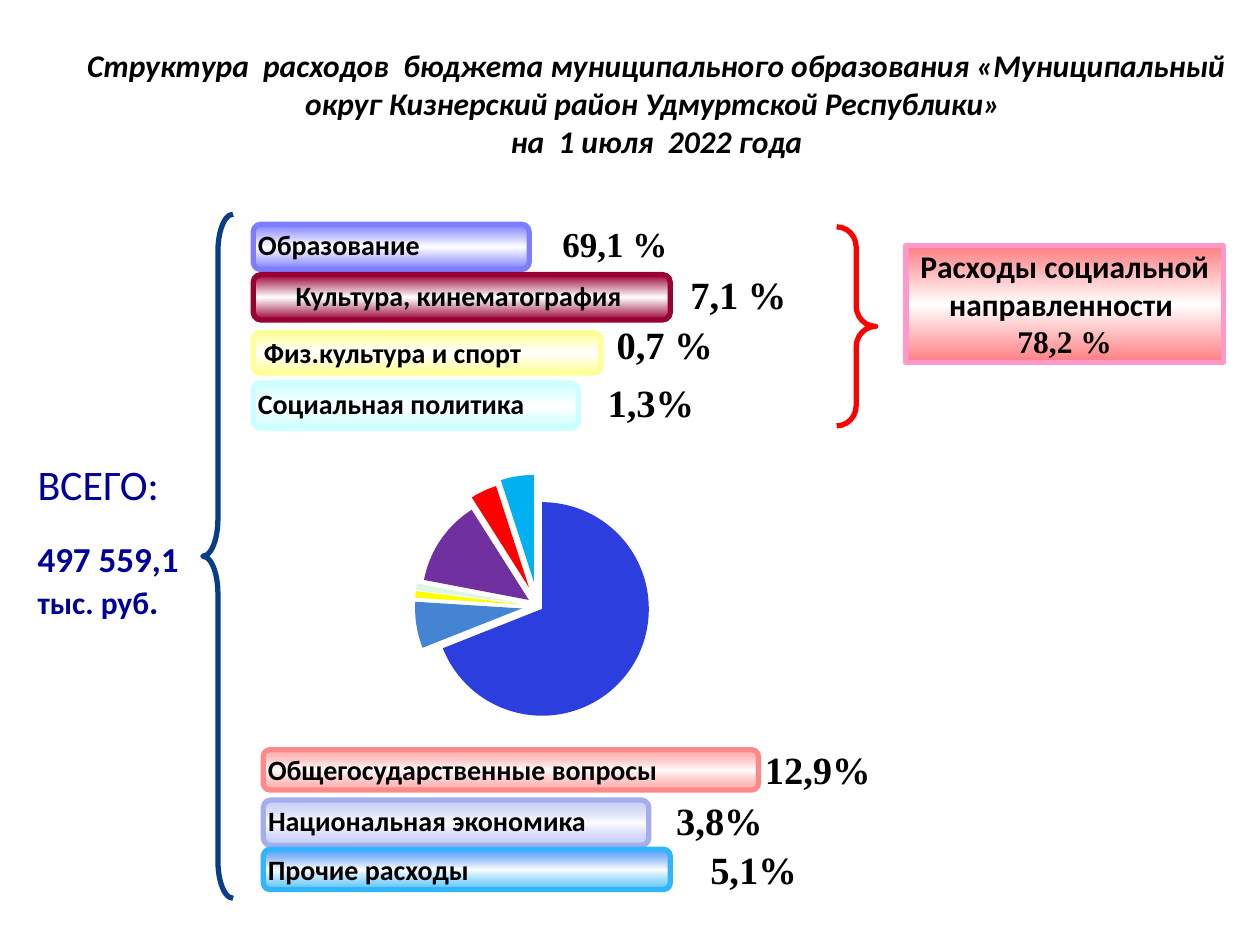
import pptx
import pptx.chart.data
import pptx.dml.color
import pptx.enum.chart
import pptx.enum.shapes
import pptx.enum.text
import pptx.oxml
import pptx.oxml.ns
import pptx.util

Inches = pptx.util.Inches
SHAPES = pptx.enum.shapes.MSO_SHAPE
ALIGN = pptx.enum.text.PP_ALIGN
ANCHOR = pptx.enum.text.MSO_ANCHOR
FIT = pptx.enum.text.MSO_AUTO_SIZE

COLORS = {
    "text": "000000", "white": "FFFFFF", "total": "000099",
    "education": "7D7DFF", "culture": "990033", "sport": "FFFF99", "social": "CCFFFF",
    "general": "FF7D7D", "general line": "FF8989",
    "economy": "A4B1F4", "economy line": "A5AEED",
    "other": "2D83F4", "other line": "31B6FD",
    "summary": "FF7C80", "summary line": "FF99CC",
    "social brace": "FF0000", "total brace": "073E87",
}
SLICES = [
    (69, "2D3EDF", 5), (7, "4584D3", 15), (1, "FFFF00", 15), (1, "DEF6E4", 15),
    (13, "7030A0", 10), (4, "FF0000", 19), (5, "00B0F0", 23),
]


def rgb(name):
    return pptx.dml.color.RGBColor.from_string(COLORS.get(name, name))


class BudgetSlide:
    sans = "Calibri"
    serif = "Times New Roman"
    line_width = pptx.util.Pt(3)

    def __init__(self, page):
        self.page = page

    def run(self, para, text, size, font=None, color="text", bold=True, italic=False):
        span = para.add_run()
        span.text = text
        span.font.size = pptx.util.Pt(size)
        span.font.name = font or self.sans
        span.font.color.rgb = rgb(color)
        span.font.bold = bold
        span.font.italic = italic

    def insets(self, frame, side, top):
        frame.margin_left = frame.margin_right = Inches(side)
        frame.margin_top = frame.margin_bottom = Inches(top)

    def title(self, lines, at):
        box = self.page.shapes.title
        box.left, box.top, box.width, box.height = map(Inches, at)
        frame = box.text_frame
        frame.vertical_anchor = ANCHOR.MIDDLE
        para = frame.paragraphs[0]
        para.alignment = ALIGN.CENTER
        for index, line in enumerate(lines):
            if index:
                para.add_line_break()
            self.run(para, line, 18, italic=True)

    def pie(self, slices, at):
        data = pptx.chart.data.CategoryChartData()
        data.categories = [str(number + 1) for number in range(len(slices))]
        data.add_series("Series 1", [value for value, _, _ in slices])
        kind = pptx.enum.chart.XL_CHART_TYPE.PIE
        chart = self.page.shapes.add_chart(kind, *map(Inches, at), data).chart
        chart.has_legend = False
        chart.has_title = False
        chart.font.name = self.sans
        chart.font.size = pptx.util.Pt(18)
        chart.font.color.rgb = rgb("text")
        plot = chart.plots[0]
        plot.vary_by_categories = True
        series = plot.series[0]
        ns = pptx.oxml.ns.nsdecls("c")
        for index, (_, color, offset) in enumerate(slices):
            fill = series.points[index].format.fill
            fill.solid()
            fill.fore_color.rgb = rgb(color)
            properties = series._element.findall(pptx.oxml.ns.qn("c:dPt"))[index].find(
                pptx.oxml.ns.qn("c:spPr"))
            properties.addprevious(pptx.oxml.parse_xml(f'<c:explosion {ns} val="{offset}"/>'))
        series._element.find(pptx.oxml.ns.qn("c:dPt")).addprevious(
            pptx.oxml.parse_xml(f'<c:explosion {ns} val="31"/>'))
        area = chart._chartSpace.chart.plotArea
        for layout in area.findall(pptx.oxml.ns.qn("c:layout")):
            area.remove(layout)
        places = "".join(f'<c:{key} val="{value}"/>' for key, value in (
            ("layoutTarget", "inner"), ("xMode", "edge"), ("yMode", "edge"),
            ("x", 0.1), ("y", 0.5), ("w", 0.54), ("h", 0.5)))
        area.insert(0, pptx.oxml.parse_xml(
            f"<c:layout {ns}><c:manualLayout>{places}</c:manualLayout></c:layout>"))

    def gradient(self, shape, stops):
        shape.fill.gradient()
        stop_list = shape._element.spPr.find(
            pptx.oxml.ns.qn("a:gradFill")).find(pptx.oxml.ns.qn("a:gsLst"))
        for stop in list(stop_list):
            stop_list.remove(stop)
        for position, (color, alpha) in zip((0, 50, 100), stops):
            stop_list.append(pptx.oxml.parse_xml(
                f'<a:gs {pptx.oxml.ns.nsdecls("a")} pos="{position * 1000}">'
                f'<a:srgbClr val="{COLORS[color]}"><a:alpha val="{alpha * 1000}"/>'
                "</a:srgbClr></a:gs>"))
        shape.fill.gradient_angle = 270

    def outlined(self, kind, at, line):
        shape = self.page.shapes.add_shape(kind, *map(Inches, at))
        shape.shadow.inherit = False
        shape.line.color.rgb = rgb(line)
        shape.line.width = self.line_width
        return shape

    def panel(self, kind, at, lines, color, line, end=None, alpha=100, align=ALIGN.LEFT):
        shape = self.outlined(kind, at, line)
        self.gradient(shape, [(color, alpha), ("white", 100), (end or color, alpha)])
        frame = shape.text_frame
        frame.word_wrap = True
        frame.auto_size = FIT.SHAPE_TO_FIT_TEXT
        frame.vertical_anchor = ANCHOR.TOP
        self.insets(frame, 0.02, 0.01)
        for index, (text, size, font) in enumerate(lines):
            para = frame.add_paragraph() if index else frame.paragraphs[0]
            para.alignment = align
            self.run(para, text, size, font)

    def bar(self, text, at, color, line=None, **options):
        self.panel(SHAPES.ROUNDED_RECTANGLE, at, [(text, 16, self.sans)],
                   color, line or color, **options)

    def percent(self, text, at, size=22):
        frame = self.page.shapes.add_textbox(*map(Inches, at)).text_frame
        frame.word_wrap = True
        frame.vertical_anchor = ANCHOR.MIDDLE
        self.insets(frame, 0.02, 0.02)
        frame.paragraphs[0].alignment = ALIGN.CENTER
        self.run(frame.paragraphs[0], text, size, self.serif)

    def brace(self, at, curve, color, rotation=0):
        shape = self.outlined(SHAPES.LEFT_BRACE, at, color)
        shape.fill.background()
        shape.adjustments[0] = curve
        shape.rotation = rotation

    def total(self, at, lines, wrap, bold):
        frame = self.page.shapes.add_textbox(*map(Inches, at)).text_frame
        frame.word_wrap = wrap
        frame.auto_size = FIT.SHAPE_TO_FIT_TEXT
        for index, spans in enumerate(lines):
            para = frame.add_paragraph() if index else frame.paragraphs[0]
            for text, size in spans:
                self.run(para, text, size, color="total", bold=bold)


def main():
    deck = pptx.Presentation()
    deck.slide_width, deck.slide_height = Inches(10), Inches(7.5)
    slide = BudgetSlide(deck.slides.add_slide(deck.slide_layouts[5]))

    slide.pie(SLICES, (1.8, 1.48, 6.67, 4.44))
    slide.title(["Структура  расходов  бюджета муниципального образования "
                 "«Муниципальный округ Кизнерский район Удмуртской Республики» ",
                 "на  1 июля  2022 года"], (0.42, 0.28, 9.58, 1.07))

    slide.bar(" Физ.культура и спорт", (2.01, 2.64, 2.76, 0.32), "sport")
    slide.bar("Социальная политика", (2.01, 3.04, 2.58, 0.36), "social")
    slide.bar("Образование", (2.01, 1.78, 2.19, 0.36), "education")
    slide.bar("Культура, кинематография ", (2.01, 2.18, 3.31, 0.36), "culture",
              align=ALIGN.CENTER)
    slide.bar("Общегосударственные вопросы", (2.09, 5.95, 3.93, 0.32), "general",
              "general line", alpha=63)
    slide.bar("Национальная экономика", (2.09, 6.35, 3.06, 0.36), "economy",
              "economy line", alpha=63)
    slide.bar("Прочие расходы", (2.09, 6.74, 3.23, 0.32), "other", "other line",
              end="other line", alpha=80)

    slide.percent("69,1 %", (4.37, 1.62, 1.02, 0.63), size=20)
    for text, left, top, width in (
            ("7,1 %", 4.92, 2.18, 1.88), ("0,7 %", 4.84, 2.58, 0.87),
            ("1,3%", 4.69, 3.04, 0.95), ("12,9%", 6.02, 5.95, 0.94),
            ("3,8%", 5.16, 6.35, 1.1), ("5,1%", 5.47, 6.74, 1.02)):
        slide.percent(text, (left, top, width, 0.31))

    slide.brace((6.64, 1.8, 0.31, 1.58), 0.52, "social brace", rotation=180)
    slide.brace((1.61, 1.7, 0.24, 5.43), 1.23, "total brace")
    slide.panel(SHAPES.RECTANGLE, (7.19, 1.95, 2.52, 0.93),
                [("Расходы социальной направленности ", 18, slide.sans),
                 ("78,2 %", 18, slide.serif)],
                "summary", "summary line", align=ALIGN.CENTER)

    slide.total((0.2, 4.22, 1.33, 0.77),
                [[("497 559,1", 20)], [("тыс. руб", 18), (".", 20)]], wrap=False, bold=True)
    slide.total((0.2, 3.59, 1.5, 0.5), [[("ВСЕГО:", 24)]], wrap=True, bold=False)

    deck.save("out.pptx")


if __name__ == "__main__":
    main()
